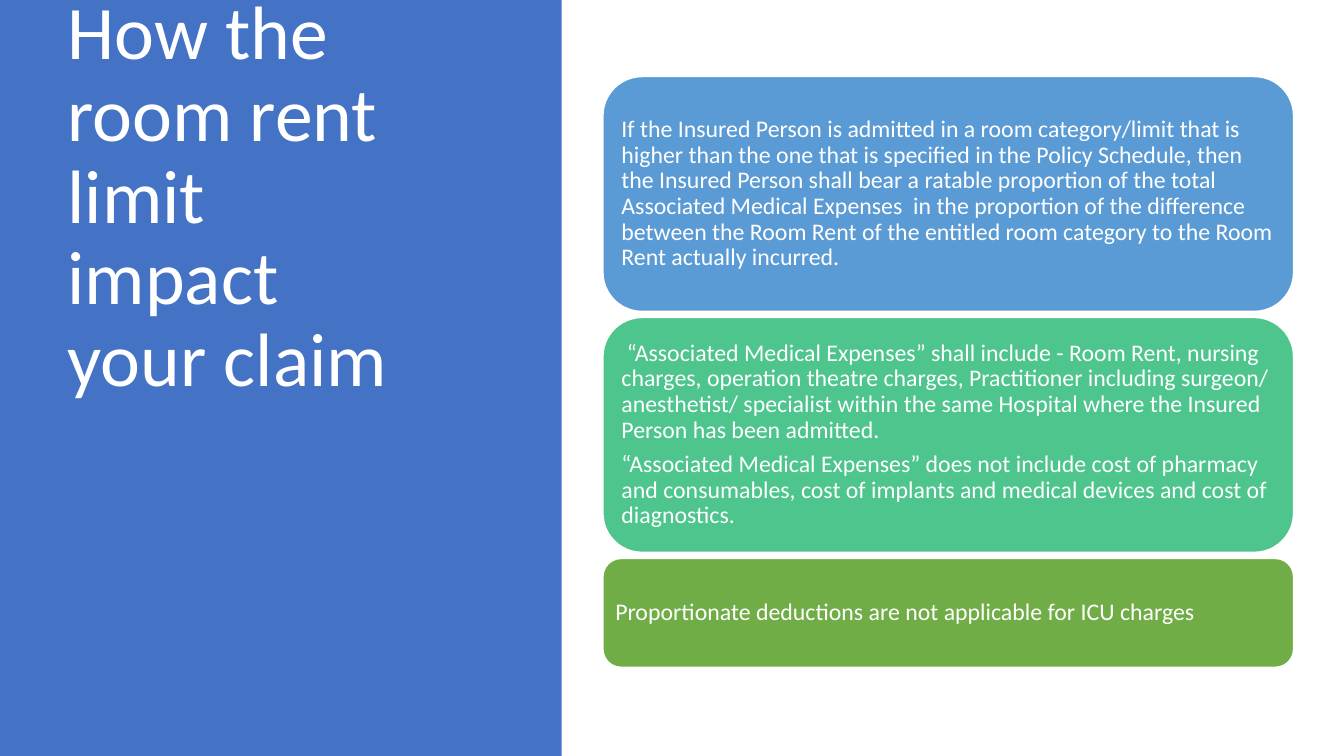
from dataclasses import dataclass

from pptx import Presentation
from pptx.dml.color import RGBColor
from pptx.enum.shapes import MSO_SHAPE
from pptx.enum.text import MSO_ANCHOR, MSO_AUTO_SIZE, PP_ALIGN
from pptx.util import Inches, Pt


@dataclass(frozen=True)
class Theme:
    font: str = "Calibri"
    title_size: int = 54
    body_size: int = 17
    text: str = "FFFFFF"
    panel: str = "4472C4"
    admission: str = "5B9BD5"
    expenses: str = "4DC58D"
    icu: str = "70AD47"


THEME = Theme()

CARD_LEFT, CARD_TOP, CARD_WIDTH, CARD_GAP = 5.98, 0.76, 6.85, 0.06

CARDS = [
    (2.33, THEME.admission, [
        "If the Insured Person is admitted in a room category/limit that is higher than "
        "the one that is specified in the Policy Schedule, then the Insured Person shall "
        "bear a ratable proportion of the total Associated Medical Expenses  in the "
        "proportion of the difference between the Room Rent of the entitled room category "
        "to the Room Rent actually incurred.",
    ]),
    (2.33, THEME.expenses, [
        " “Associated Medical Expenses” shall include - Room Rent, nursing charges, "
        "operation theatre charges, Practitioner including surgeon/ anesthetist/ "
        "specialist within the same Hospital where the Insured Person has been admitted.",
        "“Associated Medical Expenses” does not include cost of pharmacy and consumables, "
        "cost of implants and medical devices and cost of diagnostics.",
    ]),
    (1.08, THEME.icu, ["Proportionate deductions are not applicable for ICU charges"]),
]


def write_text(frame, paragraphs, size, space_after=0):
    frame.text = "\n".join(paragraphs)
    frame.word_wrap = True
    frame.auto_size = MSO_AUTO_SIZE.NONE
    frame.vertical_anchor = MSO_ANCHOR.MIDDLE
    for paragraph in frame.paragraphs:
        paragraph.alignment = PP_ALIGN.LEFT
        paragraph.line_spacing = 0.9
        paragraph.space_after = Pt(space_after)
        for run in paragraph.runs:
            run.font.name = THEME.font
            run.font.size = Pt(size)
            run.font.color.rgb = RGBColor.from_string(THEME.text)


def add_filled(slide, preset, left, top, width, height, color):
    shape = slide.shapes.add_shape(
        preset, Inches(left), Inches(top), Inches(width), Inches(height))
    shape.shadow.inherit = False
    shape.fill.solid()
    shape.fill.fore_color.rgb = RGBColor.from_string(color)
    shape.line.fill.background()
    return shape


def add_title_panel(slide, text):
    panel = add_filled(slide, MSO_SHAPE.RECTANGLE, 0, 0, 5.57, 7.5, THEME.panel)
    title = slide.shapes.title
    title.element.addprevious(panel.element)  # keeps the panel behind the title
    title.left, title.top = Inches(0.57), Inches(0.68)
    title.width, title.height = Inches(3.38), Inches(2.58)
    write_text(title.text_frame, [text], THEME.title_size)


def add_card(slide, top, height, color, paragraphs):
    card = add_filled(slide, MSO_SHAPE.ROUNDED_RECTANGLE,
                      CARD_LEFT, top, CARD_WIDTH, height, color)
    card.line.color.rgb = RGBColor.from_string(THEME.text)
    card.line.width = Pt(1)
    frame = card.text_frame
    frame.margin_left = frame.margin_right = Inches(0.07)
    frame.margin_top = frame.margin_bottom = Inches(0.07)
    write_text(frame, paragraphs, THEME.body_size, space_after=6)


def main():
    presentation = Presentation()
    presentation.slide_width = Inches(13.33)
    presentation.slide_height = Inches(7.5)
    slide = presentation.slides.add_slide(
        presentation.slide_layouts.get_by_name("Title Only"))

    add_title_panel(slide, "How the room rent limit impact your claim")
    top = CARD_TOP
    for height, color, paragraphs in CARDS:
        add_card(slide, top, height, color, paragraphs)
        top += height + CARD_GAP

    presentation.save("out.pptx")


if __name__ == "__main__":
    main()
